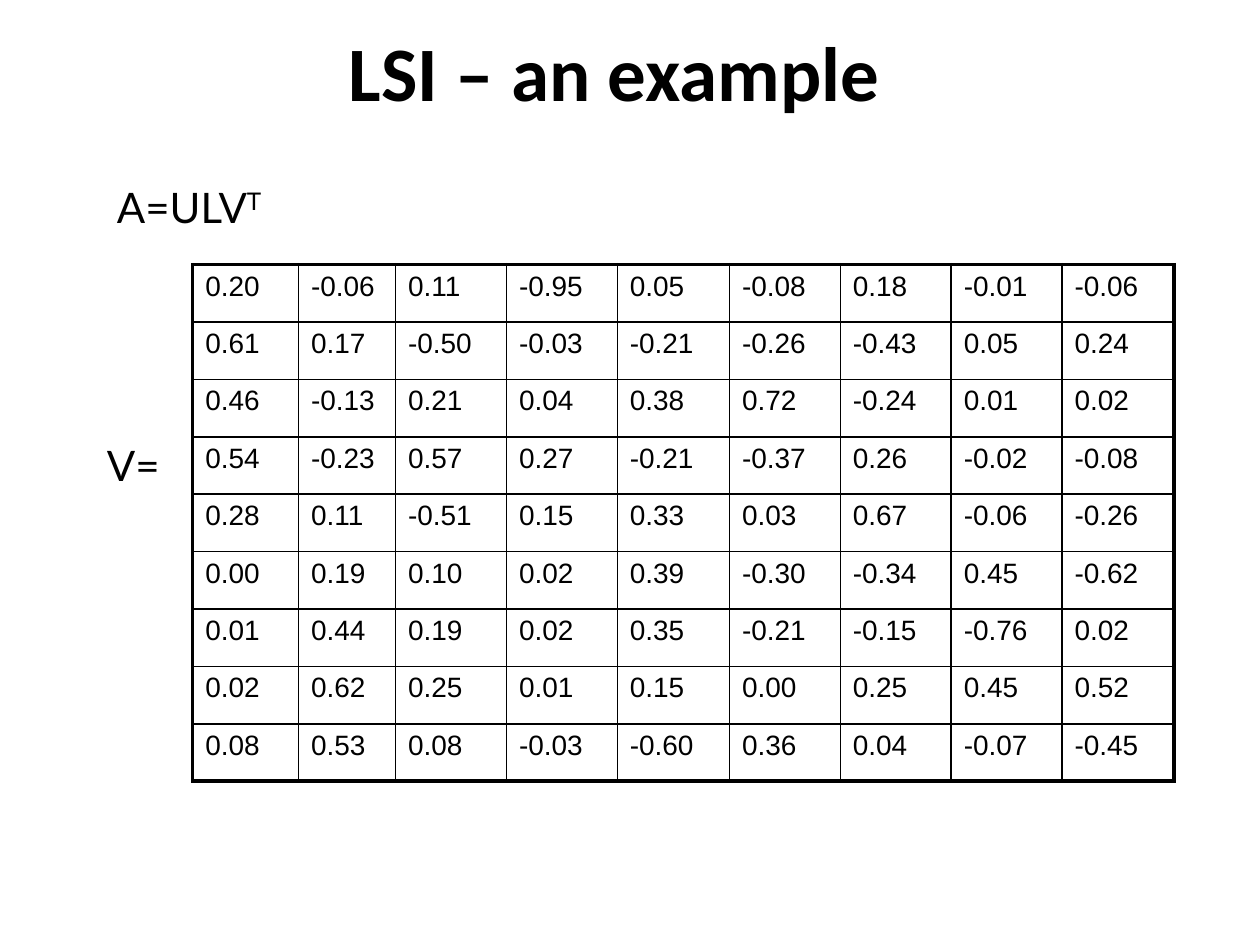
"""Build the LSI example slide with the matrix V as a table."""
from pptx import Presentation, util as u
from pptx.dml.color import RGBColor
from pptx.enum import text
from pptx.oxml import parse_xml
from pptx.oxml.ns import nsdecls

COLORS = {"ink": "000000"}
COLUMN_WIDTHS = [0.84, 0.77] + [0.88] * 2 + [0.89] + [0.88] * 3 + [0.89]
THIN, THICK = 1, 2.25
MATRIX = """
0.20 -0.06 0.11 -0.95 0.05 -0.08 0.18 -0.01 -0.06
0.61 0.17 -0.50 -0.03 -0.21 -0.26 -0.43 0.05 0.24
0.46 -0.13 0.21 0.04 0.38 0.72 -0.24 0.01 0.02
0.54 -0.23 0.57 0.27 -0.21 -0.37 0.26 -0.02 -0.08
0.28 0.11 -0.51 0.15 0.33 0.03 0.67 -0.06 -0.26
0.00 0.19 0.10 0.02 0.39 -0.30 -0.34 0.45 -0.62
0.01 0.44 0.19 0.02 0.35 -0.21 -0.15 -0.76 0.02
0.02 0.62 0.25 0.01 0.15 0.00 0.25 0.45 0.52
0.08 0.53 0.08 -0.03 -0.60 0.36 0.04 -0.07 -0.45
"""
rows = [line.split() for line in MATRIX.strip().splitlines()]


def format_runs(paragraph, name, size, bold=False):
    for run in paragraph.runs:
        run.font.name = name
        run.font.size = u.Pt(size)
        run.font.bold = bold
        run.font.color.rgb = RGBColor.from_string(COLORS["ink"])


def add_border(cell, side, points):
    cell._tc.get_or_add_tcPr().append(parse_xml(
        f'<a:ln{side} {nsdecls("a")} w="{u.Pt(points)}"><a:solidFill>'
        f'<a:srgbClr val="{COLORS["ink"]}"/></a:solidFill></a:ln{side}>'))


presentation = Presentation()
presentation.slide_width = u.Inches(10)
presentation.slide_height = u.Inches(7.5)
slide = presentation.slides.add_slide(presentation.slide_layouts[5])

title = slide.shapes.title
title.left, title.top = u.Inches(0.27), u.Inches(0.21)
title.width, title.height = u.Inches(9.21), u.Inches(0.71)
title.text_frame.text = "LSI – an example"
title.text_frame.vertical_anchor = text.MSO_ANCHOR.MIDDLE
title.text_frame.paragraphs[0].alignment = text.PP_ALIGN.CENTER
format_runs(title.text_frame.paragraphs[0], "Calibri", 44, bold=True)

for label, superscript, left, top, width in [
    ("A=ULV", "T", 0.83, 1.39, 5.17),
    ("V=", "", 0.75, 3.44, 1.25),
]:
    box = slide.shapes.add_textbox(
        u.Inches(left), u.Inches(top), u.Inches(width), u.Inches(0.5))
    box.text_frame.word_wrap = True
    box.text_frame.auto_size = text.MSO_AUTO_SIZE.SHAPE_TO_FIT_TEXT
    paragraph = box.text_frame.paragraphs[0]
    paragraph.text = label
    if superscript:
        run = paragraph.add_run()
        run.text = superscript
        run.font._element.set("baseline", "30000")
    format_runs(paragraph, "Lato", 24)

last_row, last_column = len(rows) - 1, len(COLUMN_WIDTHS) - 1
table = slide.shapes.add_table(
    len(rows), len(COLUMN_WIDTHS), u.Inches(1.53), u.Inches(2.1),
    u.Inches(sum(COLUMN_WIDTHS)), u.Inches(4.1)).table
table.first_row = table.horz_banding = False
for column, width in zip(table.columns, COLUMN_WIDTHS):
    column.width = u.Inches(width)

for row_index, values in enumerate(rows):
    for column_index, value in enumerate(values):
        cell = table.cell(row_index, column_index)
        cell.text_frame.text = value
        format_runs(cell.text_frame.paragraphs[0], "Arial", 16)
        for side, is_outer in [
            ("L", column_index == 0),
            ("R", column_index == last_column),
            ("T", row_index == 0),
            ("B", row_index == last_row),
        ]:
            add_border(cell, side, THICK if is_outer else THIN)
        cell.fill.background()

presentation.save("out.pptx")
